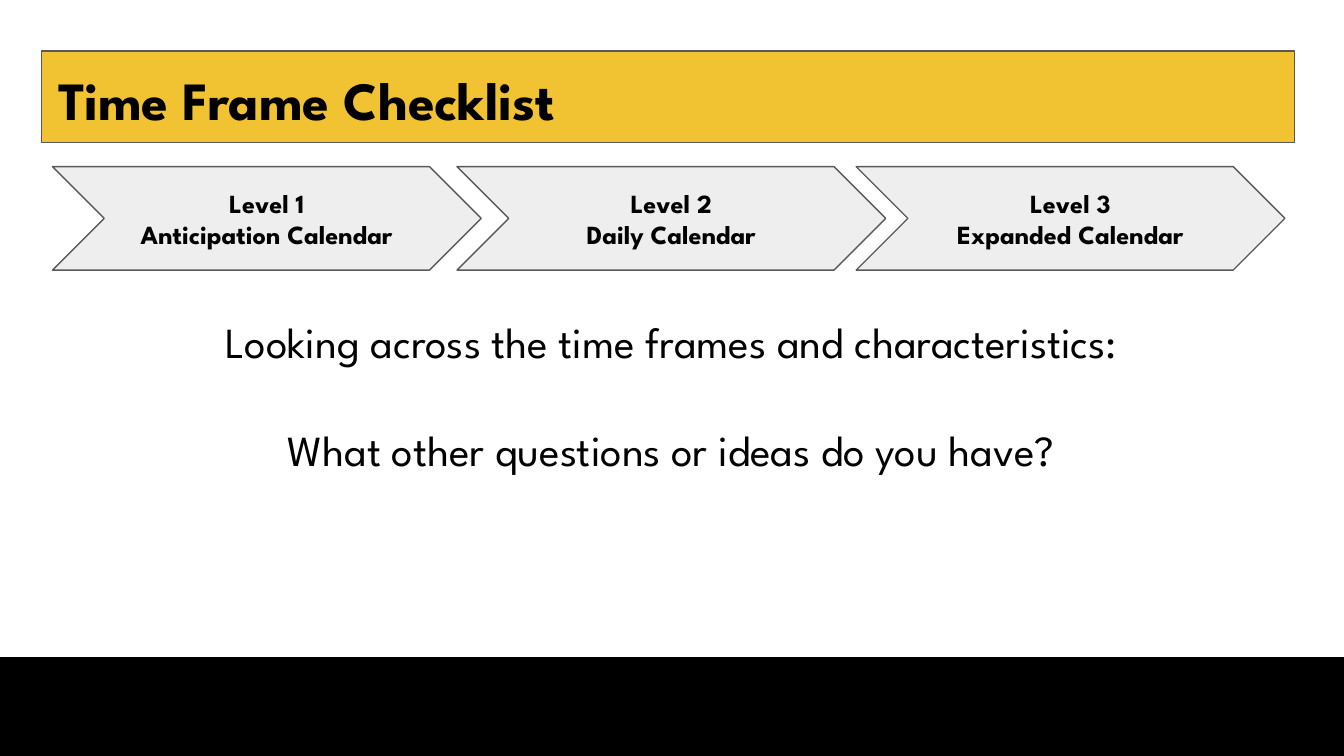
from pptx import Presentation
from pptx.dml.color import RGBColor
from pptx.enum.shapes import MSO_SHAPE
from pptx.enum.text import MSO_ANCHOR, PP_ALIGN
from pptx.util import Inches, Pt

RECT, CHEVRON = MSO_SHAPE.RECTANGLE, MSO_SHAPE.CHEVRON
TOP, MIDDLE = MSO_ANCHOR.TOP, MSO_ANCHOR.MIDDLE
LEFT, CENTER = PP_ALIGN.LEFT, PP_ALIGN.CENTER
FONT = "League Spartan"
BLACK, WHITE, GOLD, PALE, GRAY = "000000", "FFFFFF", "F1C232", "EEEEEE", "595959"
WIDTH = 10
HEIGHT = WIDTH * 9 / 16


def rgb(color):
    return RGBColor.from_string(color)


def write(tf, lines, size, bold=False, align=LEFT, anchor=TOP, spacing=None, gap=0):
    tf.word_wrap = True
    tf.vertical_anchor = anchor
    tf.margin_left = tf.margin_right = tf.margin_top = tf.margin_bottom = Inches(0.1)
    for i, line in enumerate(lines):
        p = tf.add_paragraph() if i else tf.paragraphs[0]
        p.alignment = align
        p.line_spacing = spacing
        if i and gap:
            p.space_before = Pt(gap)
        r = p.add_run()
        r.text = line
        r.font.name = FONT
        r.font.size = Pt(size)
        r.font.bold = bold
        r.font.color.rgb = rgb(BLACK)


class Deck:
    def __init__(self):
        self.prs = Presentation()
        self.prs.slide_width = Inches(WIDTH)
        self.prs.slide_height = Inches(HEIGHT)
        self.s = self.prs.slides.add_slide(self.prs.slide_layouts[6])

    def shape(self, kind, box, fill, line):
        sp = self.s.shapes.add_shape(kind, *map(Inches, box))
        sp.shadow.inherit = False
        sp.fill.solid()
        sp.fill.fore_color.rgb = rgb(fill)
        sp.line.color.rgb = rgb(line)
        sp.line.width = Pt(0.75)
        return sp

    def text(self, box, lines, **fmt):
        sp = self.s.shapes.add_textbox(*map(Inches, box))
        write(sp.text_frame, lines, **fmt)

    def level(self, left, lines):
        sp = self.shape(CHEVRON, (left, 1.24, 3.19, 0.77), PALE, GRAY)
        write(sp.text_frame, lines, size=14, bold=True, align=CENTER, anchor=MIDDLE)


def main():
    deck = Deck()
    deck.shape(RECT, (0, HEIGHT - 0.73, WIDTH, 0.73), BLACK, BLACK)
    deck.shape(RECT, (0.31, 0.38, 9.32, 0.68), GOLD, GRAY)
    deck.text((0.34, 0.4, 9.32, 0.63), ["Time Frame Checklist"], size=28.8, bold=True)

    body = deck.shape(RECT, (0.34, 2.23, 9.32, 2.49), WHITE, WHITE)
    questions = ["Looking across the time frames and characteristics:",
                 "What other questions or ideas do you have?"]
    write(body.text_frame, questions, size=23, align=CENTER, spacing=1.05, gap=29)

    levels = [(6.37, "Level 3", "Expanded Calendar"),
              (3.4, "Level 2", "Daily Calendar"),
              (0.39, "Level 1", "Anticipation Calendar")]
    for left, *lines in levels:
        deck.level(left, lines)
    deck.prs.save("out.pptx")


if __name__ == "__main__":
    main()
